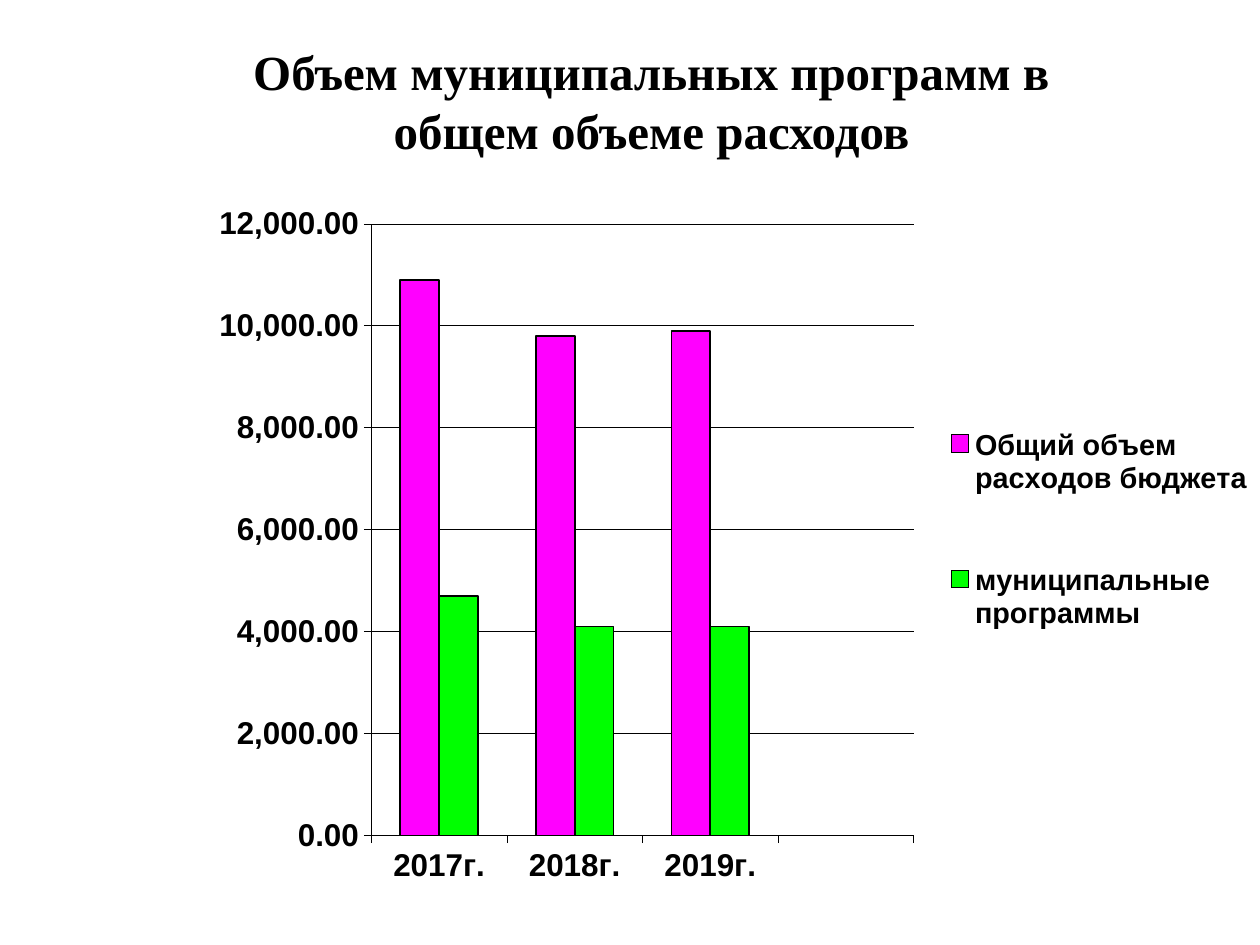
from lxml import etree
from pptx import Presentation
from pptx.chart.data import CategoryChartData
from pptx.dml.color import RGBColor
from pptx.enum.chart import XL_CHART_TYPE as ChartType, XL_LEGEND_POSITION as LegendPos
from pptx.enum.chart import XL_TICK_LABEL_POSITION as LabelPos, XL_TICK_MARK as Tick
from pptx.enum.text import MSO_ANCHOR, PP_ALIGN
from pptx.oxml.ns import qn
from pptx.util import Inches, Pt

BLACK = RGBColor(0, 0, 0)
MAGENTA = RGBColor(255, 0, 255)
GREEN = RGBColor(0, 255, 0)

TITLE = ["Объем муниципальных программ в", "общем объеме расходов"]
YEARS = ["2017г.", "2018г.", "2019г.", ""]
SERIES = [
    ("Общий объем расходов бюджета", (10900, 9800, 9900, None), MAGENTA),
    ("муниципальные программы", (4700, 4100, 4100, None), GREEN),
]


def set_font(font, name, size):
    font.name, font.size, font.bold = name, Pt(size), True
    font.color.rgb = BLACK


def set_line(line, width):
    line.color.rgb = BLACK
    line.width = Pt(width)


def set_layout(element, shares, inner=False):
    """Place a chart part by its left, top, width and height as shares of the chart."""
    layout = element.find(qn("c:layout"))
    if layout is None:
        layout = etree.Element(qn("c:layout"))
        position = element.find(qn("c:legendPos"))
        if position is None:
            element.insert(0, layout)
        else:
            position.addnext(layout)
    for child in list(layout):
        layout.remove(child)
    manual = etree.SubElement(layout, qn("c:manualLayout"))
    settings = [("layoutTarget", "inner")] if inner else []
    settings += [("xMode", "edge"), ("yMode", "edge")]
    settings += zip("xywh", shares)
    for tag, value in settings:
        etree.SubElement(manual, qn("c:" + tag)).set("val", str(value))


def add_title(slide, box):
    tf = slide.shapes.add_textbox(*box).text_frame
    tf.word_wrap = True
    tf.vertical_anchor = MSO_ANCHOR.MIDDLE
    for i, line in enumerate(TITLE):
        p = tf.add_paragraph() if i else tf.paragraphs[0]
        p.alignment = PP_ALIGN.CENTER
        r = p.add_run()
        r.text = line
        set_font(r.font, "Times New Roman", 28)


def add_budget_chart(slide, box):
    data = CategoryChartData(number_format="#,##0.00")
    data.categories = YEARS
    for name, values, _ in SERIES:
        data.add_series(name, values)
    chart = slide.shapes.add_chart(ChartType.COLUMN_CLUSTERED, *box, data).chart
    chart.has_title = False
    set_font(chart.font, "Arial", 18)

    plot = chart.plots[0]
    plot.gap_width, plot.overlap, plot.vary_by_categories = 150, 0, False
    for series, (_, _, color) in zip(plot.series, SERIES):
        series.format.fill.solid()
        series.format.fill.fore_color.rgb = color
        set_line(series.format.line, 1)

    for axis in (chart.category_axis, chart.value_axis):
        axis.major_tick_mark, axis.minor_tick_mark = Tick.OUTSIDE, Tick.NONE
        set_font(axis.tick_labels.font, "Arial", 18)
        set_line(axis.format.line, 0.25)
    chart.category_axis.tick_label_position = LabelPos.LOW

    values = chart.value_axis
    values.minimum_scale, values.maximum_scale, values.major_unit = 0, 12000, 2000
    values.tick_labels.number_format = "#,##0.00"
    values.tick_labels.number_format_is_linked = False
    values.has_major_gridlines = True
    set_line(values.major_gridlines.format.line, 0.25)

    chart.has_legend = True
    legend = chart.legend
    legend.position, legend.include_in_layout = LegendPos.RIGHT, False
    set_font(legend.font, "Arial", 16.5)

    plot_area = chart.element.find(".//" + qn("c:plotArea"))
    set_layout(plot_area, (0.143, 0.047, 0.523, 0.826), inner=True)
    set_layout(chart.element.find(".//" + qn("c:legend")), (0.69, 0.23, 0.31, 0.46))


def main():
    prs = Presentation()
    prs.slide_width, prs.slide_height = Inches(10), Inches(7.5)
    slide = prs.slides.add_slide(prs.slide_layouts[6])
    add_title(slide, [Inches(n) for n in (0.67, 0.25, 9, 1.1)])
    add_budget_chart(slide, [Inches(n) for n in (1.74, 1.5, 8.26, 5.88)])
    prs.save("out.pptx")


if __name__ == "__main__":
    main()
